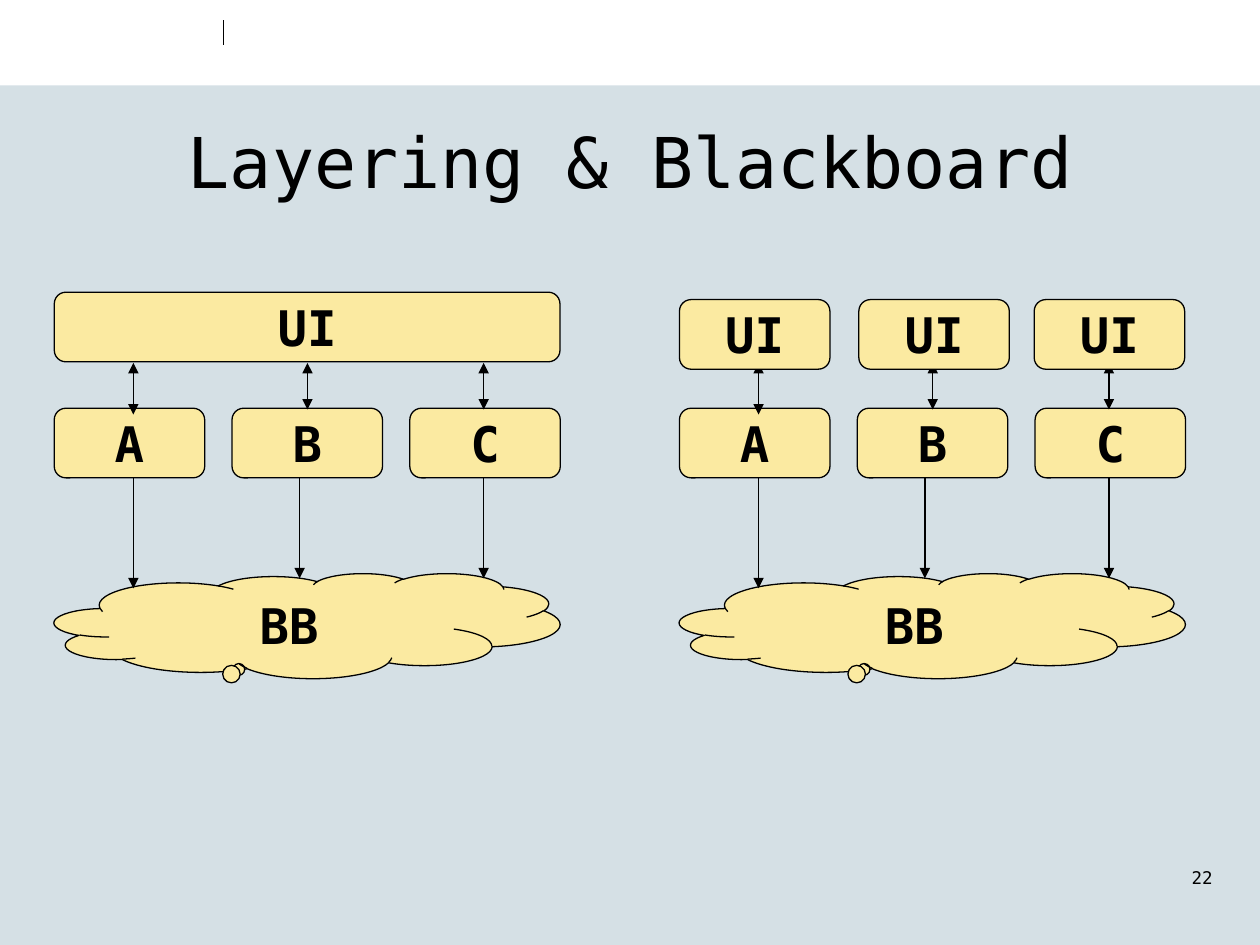
from dataclasses import dataclass

from lxml import etree
from pptx import Presentation
from pptx.dml.color import RGBColor
from pptx.enum.shapes import MSO_CONNECTOR, MSO_SHAPE
from pptx.enum.text import MSO_ANCHOR, PP_ALIGN
from pptx.oxml.ns import qn
from pptx.slide import Slide
from pptx.util import Pt

RECT, ROUNDED, CLOUD = MSO_SHAPE.RECTANGLE, MSO_SHAPE.ROUNDED_RECTANGLE, MSO_SHAPE.CLOUD_CALLOUT
STRAIGHT = MSO_CONNECTOR.STRAIGHT
TOP, MIDDLE = MSO_ANCHOR.TOP, MSO_ANCHOR.MIDDLE
CENTER, RIGHT = PP_ALIGN.CENTER, PP_ALIGN.RIGHT

COLORS = {"ground": "D5E0E5", "header": "FFFFFF", "node": "FBEAA1", "ink": "000000"}
FONT = "DejaVu Sans Mono"
BOX_WIDTH, BOX_HEIGHT, PITCH = 86, 39.8, 101.6
DIAGRAM_WIDTH = 289
PART_TOP, CLOUD_TOP = 233.3, 327.6
LINK_TOP, STORE_LINK_TOP = 207.4, 273
LINKS = [(45.2, 236.9), (144.7, 234), (245.4, 234)]
STORE_LINKS = [(45.2, 336.2), (140.2, 330.5), (245.4, 330.5)]


@dataclass
class Painter:
    """Draws styled elements on the current slide."""

    page: Slide

    def color(self, name):
        return RGBColor.from_string(COLORS[name])

    def background(self):
        fill = self.page.background.fill
        fill.solid()
        fill.fore_color.rgb = self.color("ground")

    def label(self, frame, text, size, bold=False, align=CENTER, anchor=MIDDLE, wrap=True):
        frame.word_wrap = wrap
        frame.vertical_anchor = anchor
        para = frame.paragraphs[0]
        para.text = text
        para.alignment = align
        para.font.name, para.font.size, para.font.bold = FONT, Pt(size), bold
        para.font.color.rgb = self.color("ink")

    def title(self, text, left, top, width, height):
        title = self.page.shapes.title
        title.left, title.top, title.width, title.height = map(Pt, (left, top, width, height))
        self.label(title.text_frame, text, 40)

    def text(self, text, left, top, width, height):
        box = self.page.shapes.add_textbox(Pt(left), Pt(top), Pt(width), Pt(height))
        self.label(box.text_frame, text, 10, align=RIGHT, anchor=TOP)

    def shape(self, kind, left, top, width, height, fill):
        shape = self.page.shapes.add_shape(kind, Pt(left), Pt(top), Pt(width), Pt(height))
        shape.shadow.inherit = False
        shape.fill.solid()
        shape.fill.fore_color.rgb = self.color(fill)
        return shape

    def band(self, left, top, width, height):
        self.shape(RECT, left, top, width, height, "header").line.fill.background()

    def outline(self, shape):
        shape.line.color.rgb = self.color("ink")
        shape.line.width = Pt(0.75)

    def node(self, text, left, top, width=BOX_WIDTH):
        box = self.shape(ROUNDED, left, top, width, BOX_HEIGHT, "node")
        self.outline(box)
        self.label(box.text_frame, text, 28, bold=True, wrap=False)

    def cloud(self, text, left):
        cloud = self.shape(CLOUD, left, CLOUD_TOP, DIAGRAM_WIDTH, 60, "node")
        cloud.adjustments[0], cloud.adjustments[1] = -0.13, 0.4
        self.outline(cloud)
        self.label(cloud.text_frame, text, 28, bold=True, anchor=TOP)

    def line(self, x, top, bottom, width=0.75, ends=()):
        line = self.page.shapes.add_connector(STRAIGHT, Pt(x), Pt(top), Pt(x), Pt(bottom))
        line.line.color.rgb = self.color("ink")
        line.line.width = Pt(width)
        properties = line._element.spPr
        for end in ends:
            etree.SubElement(properties.get_or_add_ln(), qn(f"a:{end}"), type="triangle")
        etree.SubElement(properties, qn("a:effectLst"))

    def diagram(self, left, interfaces):
        self.cloud("BB", left)
        for index, name in enumerate("ABC"):
            self.node(name, left + index * PITCH, PART_TOP)
        for offset, bottom in STORE_LINKS:
            self.line(left + offset, STORE_LINK_TOP, bottom, ends=["tailEnd"])
        for offset, bottom in LINKS:
            self.line(left + offset, LINK_TOP, bottom, ends=["headEnd", "tailEnd"])
        for offset, top, width in interfaces:
            self.node("UI", left + offset, top, width)


def main():
    deck = Presentation()
    deck.slide_width, deck.slide_height = Pt(720), Pt(540)
    painter = Painter(deck.slides.add_slide(deck.slide_layouts[5]))
    painter.background()
    painter.band(0, 0, 720, 48.8)
    painter.line(127.5, 11.5, 26, width=0.5)
    painter.title("Layering & Blackboard", 54, 55, 612, 73.5)
    painter.text("22", 550, 491.8, 150, 36)
    painter.diagram(31, [(0, 167, DIAGRAM_WIDTH)])
    painter.diagram(388.3, [(offset, 171.2, BOX_WIDTH) for offset in (0, 102.5, 202.7)])
    deck.save("out.pptx")


if __name__ == "__main__":
    main()
